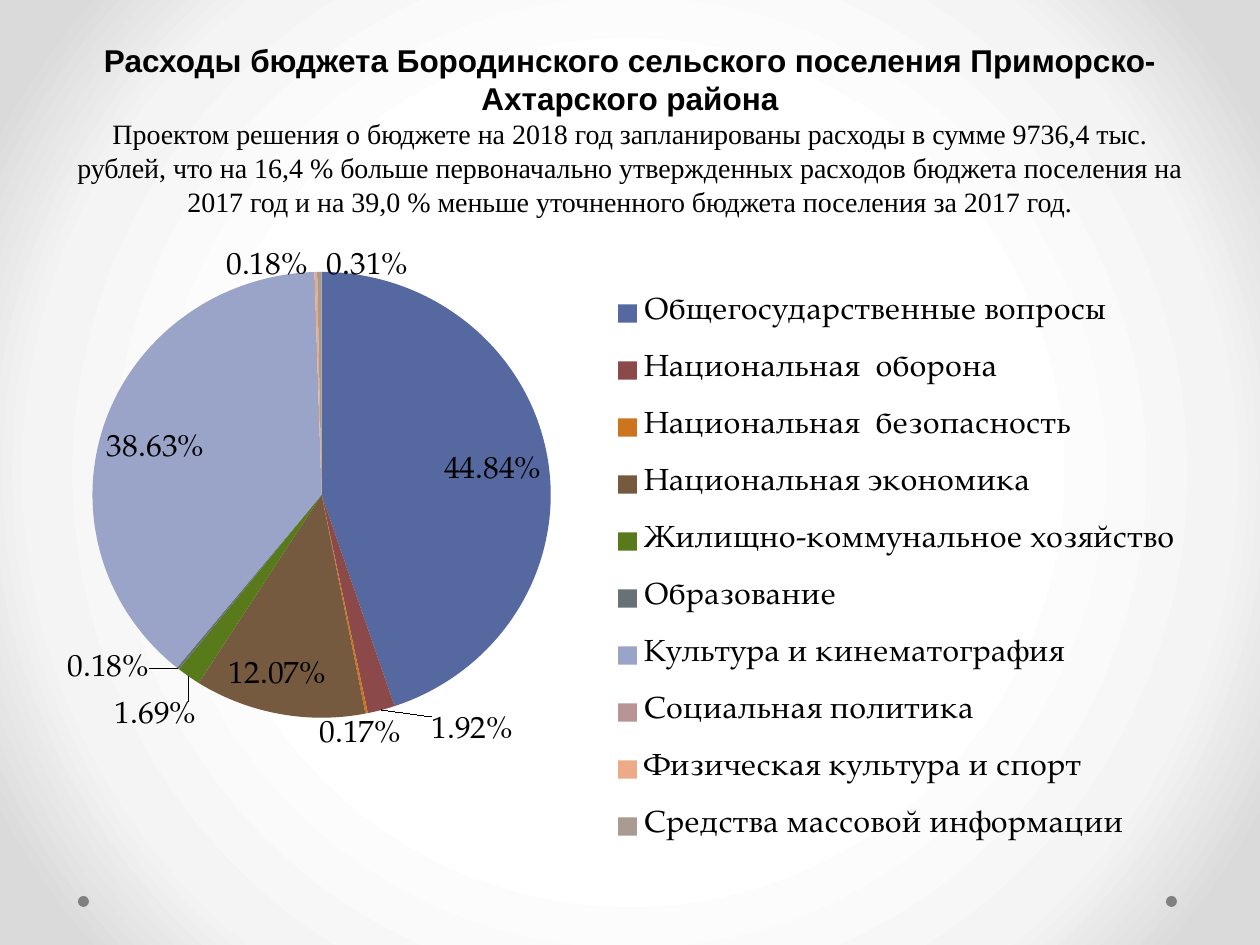
"""Build a budget spending slide with a pie chart."""
import pptx
import pptx.chart.data
import pptx.dml.color
import pptx.enum.chart
import pptx.enum.shapes
import pptx.enum.text
import pptx.oxml
import pptx.oxml.ns
import pptx.util

SCALE = 914400 / 126
HUES = {"edge": "DADADA", "mist": "F4F4F4", "white": "FFFFFF", "dot": "808080", "ink": "000000"}
SPEND = [
    ("Общегосударственные вопросы", 44.84, "5568A0"),
    ("Национальная  оборона", 1.92, "8B4949"),
    ("Национальная  безопасность", 0.17, "CD751E"),
    ("Национальная экономика", 12.07, "755A40"),
    ("Жилищно-коммунальное хозяйство", 1.69, "587A1B"),
    ("Образование", 0.18, "687276"),
    ("Культура и кинематография", 38.63, "9AA4C9"),
    ("Социальная политика", 0, "B89494"),
    ("Физическая культура и спорт", 0.18, "ECAB86"),
    ("Средства массовой информации", 0.31, "A99B91"),
]
SHIFTS = {1: (0.04, 0), 2: (-0.04, 0), 4: (0.01, 0.03), 5: (-0.02, -0.03), 8: (-0.04, 0), 9: (0.04, 0)}
FACE = "TeX Gyre Pagella"
NS = pptx.oxml.ns.nsdecls("a", "c")


def px(*nums):
    return [round(num * SCALE) for num in nums]


def tint(fill, hue):
    fill.solid()
    fill.fore_color.rgb = pptx.dml.color.RGBColor.from_string(hue)


deck = pptx.Presentation()
deck.slide_width, deck.slide_height = px(1260, 945)
slide = deck.slides.add_slide(deck.slide_layouts[5])

slide.background.fill.solid()
stops = [(0, "white"), (50, "white"), (76, "mist"), (92, "edge"), (100, "edge")]
marks = "".join(
    f'<a:gs pos="{pos * 1000}"><a:srgbClr val="{HUES[key]}"/></a:gs>' for pos, key in stops
)
glow = pptx.oxml.parse_xml(
    f'<a:gradFill {NS} rotWithShape="1"><a:gsLst>{marks}</a:gsLst><a:path path="circle">'
    '<a:fillToRect l="50000" t="50000" r="50000" b="50000"/></a:path></a:gradFill>'
)
flat = slide.element.xpath(".//p:bgPr/a:solidFill")[0]
flat.getparent().replace(flat, glow)

for left in (1166, 78):
    dot = slide.shapes.add_shape(pptx.enum.shapes.MSO_SHAPE.OVAL, *px(left, 896, 11, 11))
    dot.shadow.inherit = False
    dot.line.fill.background()
    tint(dot.fill, HUES["dot"])

title = slide.shapes.title
title.left, title.top, title.width, title.height = px(63, 0, 1134, 224)
frame = title.text_frame
form = {
    "word_wrap": True,
    "auto_size": pptx.enum.text.MSO_AUTO_SIZE.NONE,
    "vertical_anchor": pptx.enum.text.MSO_ANCHOR.BOTTOM,
}
for name, value in form.items():
    setattr(frame, name, value)
para = frame.paragraphs[0]
para.alignment = pptx.enum.text.PP_ALIGN.CENTER
parts = [
    ("Расходы бюджета Бородинского сельского поселения Приморско-Ахтарского района",
     {"name": "Arial", "size": pptx.util.Pt(18), "bold": True}),
    ("Проектом решения о бюджете на 2018 год запланированы расходы в сумме 9736,4 тыс. рублей, "
     "что на 16,4 % больше первоначально утвержденных расходов бюджета поселения на 2017 год "
     "и на 39,0 % меньше уточненного бюджета поселения за 2017 год.",
     {"name": "Times New Roman", "size": pptx.util.Pt(16), "bold": False}),
]
for text, form in parts:
    if para.runs:
        para.add_line_break()
    run = para.add_run()
    run.text = text
    tint(run.font.fill, HUES["ink"])
    for name, value in form.items():
        setattr(run.font, name, value)

data = pptx.chart.data.CategoryChartData()
data.categories = [name for name, share, hue in SPEND]
data.add_series("Series 1", [share for name, share, hue in SPEND])
chart = slide.shapes.add_chart(
    pptx.enum.chart.XL_CHART_TYPE.PIE, *px(25, 234, 1211, 674), data
).chart
chart.has_title = False
chart.font.name = FACE
chart.font.size = pptx.util.Pt(18)
tint(chart.font.fill, HUES["ink"])
chart.has_legend = True
chart.legend.position = pptx.enum.chart.XL_LEGEND_POSITION.RIGHT
chart.legend.include_in_layout = False
plot = chart.plots[0]
plot.vary_by_categories = True
pie = plot.series[0]
for spot, (name, share, hue) in enumerate(SPEND):
    tint(pie.points[spot].format.fill, hue)
    pie.points[spot].format.line.fill.background()

form = {
    "show_value": False,
    "show_percentage": True,
    "number_format": "0.00%",
    "number_format_is_linked": False,
    "position": pptx.enum.chart.XL_LABEL_POSITION.BEST_FIT,
}
for name, value in form.items():
    setattr(pie.data_labels, name, value)
group = chart.element.xpath(".//c:ser/c:dLbls")[0]
shows = "".join(
    f'<c:show{key} val="{int(key == "Percent")}"/>'
    for key in ("LegendKey", "Val", "CatName", "SerName", "Percent", "BubbleSize")
)
tags = {
    spot: f'<c:layout><c:manualLayout><c:x val="{dx}"/><c:y val="{dy}"/></c:manualLayout></c:layout>'
    f'<c:numFmt formatCode="0.00%" sourceLinked="0"/><c:dLblPos val="outEnd"/>{shows}'
    for spot, (dx, dy) in SHIFTS.items()
}
tags[7] = '<c:delete val="1"/>'
for place, spot in enumerate(sorted(tags)):
    group.insert(place, pptx.oxml.parse_xml(
        f'<c:dLbl {NS}><c:idx val="{spot}"/>{tags[spot]}</c:dLbl>'
    ))

boxes = [("plotArea", '<c:layoutTarget val="inner"/>', (0.02, 0.03, 0.45, 0.68)),
         ("legend", "", (0.47, 0.03, 0.5, 0.91))]
for owner, target, nums in boxes:
    modes = "".join(f'<c:{key}Mode val="edge"/>' for key in "xy")
    sizes = "".join(f'<c:{key} val="{num}"/>' for key, num in zip("xywh", nums))
    box = pptx.oxml.parse_xml(
        f"<c:layout {NS}><c:manualLayout>{target}{modes}{sizes}</c:manualLayout></c:layout>"
    )
    node = chart.element.xpath(f".//c:{owner}")[0]
    for old in node.xpath("./c:layout"):
        node.remove(old)
    node.insert(int(owner == "legend"), box)

deck.save("out.pptx")
